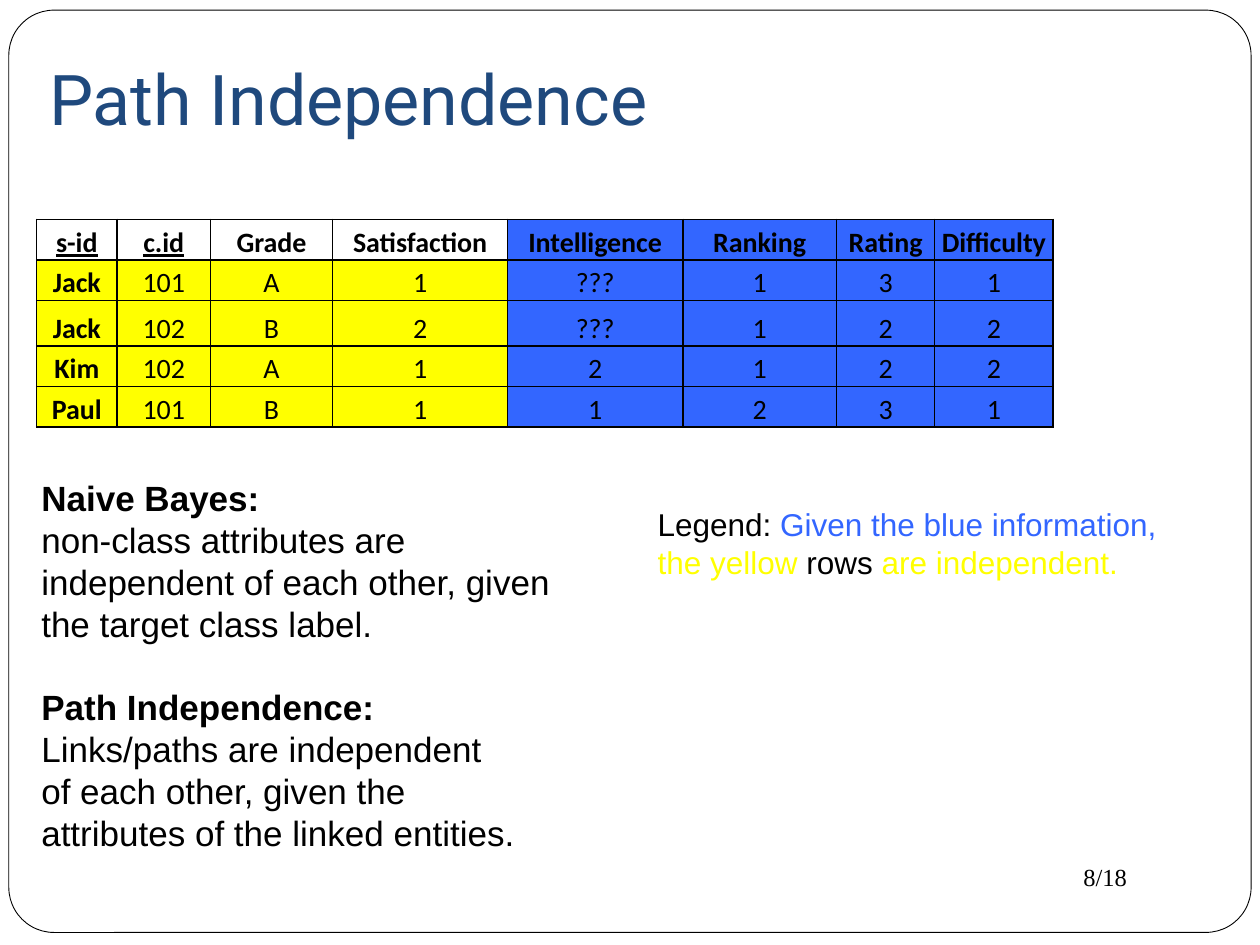
from typing import NamedTuple

from lxml import etree
from pptx import Presentation
from pptx.dml.color import RGBColor
from pptx.enum.shapes import MSO_SHAPE
from pptx.enum.text import MSO_ANCHOR, MSO_AUTO_SIZE, PP_ALIGN
from pptx.oxml.ns import qn
from pptx.util import Emu, Inches, Pt

ROUNDED = MSO_SHAPE.ROUNDED_RECTANGLE
BOTTOM = MSO_ANCHOR.BOTTOM
CENTER, LEFT = PP_ALIGN.CENTER, PP_ALIGN.LEFT
NO_AUTOFIT = MSO_AUTO_SIZE.NONE
GROW = MSO_AUTO_SIZE.SHAPE_TO_FIT_TEXT

SLIDE_WIDTH, SLIDE_HEIGHT = Inches(10), Inches(7.5)
BLACK, WHITE = "000000", "FFFFFF"
BLUE, YELLOW, NAVY = "3366FF", "FFFF00", "1F497D"

COLUMN_WIDTHS = [0.64, 0.74, 0.97, 1.39, 1.39, 1.22, 0.78, 0.94]
ROW_HEIGHTS = [0.32, 0.32, 0.36, 0.32, 0.32]
KEY_COLUMNS = 2
LINK_COLUMNS = 4
RECORDS = [
    ["s-id", "c.id", "Grade", "Satisfaction", "Intelligence", "Ranking", "Rating", "Difficulty"],
    ["Jack", "101", "A", "1", "???", "1", "3", "1"],
    ["Jack", "102", "B", "2", "???", "1", "2", "2"],
    ["Kim", "102", "A", "1", "2", "1", "2", "2"],
    ["Paul", "101", "B", "1", "1", "2", "3", "1"],
]


class Area(NamedTuple):
    """Left, top, width and height as percentages of the slide."""
    left: float
    top: float
    width: float
    height: float

    def lengths(self) -> list[Emu]:
        sides = (SLIDE_WIDTH, SLIDE_HEIGHT) * 2
        return [Emu(round(side * share / 100)) for side, share in zip(sides, self)]


class Phrase(NamedTuple):
    text: str
    color: str = BLACK
    bold: bool = False


class Note(NamedTuple):
    area: Area
    lines: list[list[Phrase]]
    size: int
    font: str = "Arial"
    wrap: bool = True


NOTES = [
    Note(Area(85, 90.53, 10, 4.53), [[Phrase("8/18")]], 14, "Times New Roman"),
    Note(Area(2.3, 71.87, 39.7, 19.33), [
        [Phrase("Path Independence:", bold=True)],
        [Phrase("Links/paths are independent of each other, given the "
                "attributes of the linked entities.")],
    ], 20),
    Note(Area(2.3, 49.73, 46.3, 19.33), [
        [Phrase("Naive Bayes:", bold=True)],
        [Phrase("non-class attributes are independent of each other, given "
                "the target class label.")],
    ], 20),
    Note(Area(51.2, 52.8, 41.9, 9.47), [
        [Phrase("Legend: "), Phrase("Given the blue information,", BLUE)],
        [Phrase("the yellow ", YELLOW), Phrase("rows"), Phrase(" are independent.", YELLOW)],
    ], 18, wrap=False),
]


def rgb(value: str) -> RGBColor:
    return RGBColor.from_string(value)


def style_run(run, font: str, size: int, color: str, bold: bool = False) -> None:
    run.font.name = font
    run.font.size = Pt(size)
    run.font.bold = bold
    run.font.color.rgb = rgb(color)


def add_frame(slide) -> None:
    frame = slide.shapes.add_shape(ROUNDED, *Area(0.7, 1.07, 98.6, 97.6).lengths())
    frame.adjustments[0] = 0.049
    frame.shadow.inherit = False
    frame.fill.solid()
    frame.fill.fore_color.rgb = rgb(WHITE)
    frame.line.color.rgb = rgb(BLACK)
    frame.line.width = Pt(0.5)
    # The title placeholder already exists, so the frame goes behind it.
    slide.shapes.element.insert(2, frame.element)


def format_title(slide) -> None:
    title = slide.shapes.title
    title.left, title.top, title.width, title.height = Area(2.9, 4, 94.7, 12.13).lengths()
    text_frame = title.text_frame
    text_frame.text = "Path Independence"
    text_frame.auto_size = NO_AUTOFIT
    text_frame.vertical_anchor = BOTTOM
    text_frame.margin_bottom = Inches(0.1)
    heading = text_frame.paragraphs[0]
    heading.alignment = LEFT
    style_run(heading.runs[0], "Roboto", 40, NAVY)


def add_note(slide, note: Note) -> None:
    text_frame = slide.shapes.add_textbox(*note.area.lengths()).text_frame
    text_frame.word_wrap = note.wrap
    text_frame.auto_size = GROW
    for index, phrases in enumerate(note.lines):
        paragraph = text_frame.add_paragraph() if index else text_frame.paragraphs[0]
        for phrase in phrases:
            run = paragraph.add_run()
            run.text = phrase.text
            style_run(run, note.font, note.size, phrase.color, phrase.bold)


def add_cell_borders(cell) -> None:
    properties = cell._tc.get_or_add_tcPr()
    for position, side in enumerate(("a:lnL", "a:lnR", "a:lnT", "a:lnB")):
        border = etree.Element(qn(side), w=str(Pt(1)))
        fill = etree.SubElement(border, qn("a:solidFill"))
        etree.SubElement(fill, qn("a:srgbClr"), val=BLACK)
        properties.insert(position, border)


def fill_cell(cell, text: str, row: int, column: int) -> None:
    cell.text = text
    cell.vertical_anchor = BOTTOM
    cell.margin_left = cell.margin_right = cell.margin_top = Inches(0.01)
    cell.margin_bottom = 0
    paragraph = cell.text_frame.paragraphs[0]
    paragraph.alignment = CENTER
    paragraph.line_spacing = 1.15
    paragraph.space_after = Pt(10)
    run = paragraph.runs[0]
    style_run(run, "Calibri", 16, BLACK, bold=row == 0 or column == 0)
    run.font.underline = row == 0 and column < KEY_COLUMNS
    if column >= LINK_COLUMNS:
        color = BLUE
    else:
        color = YELLOW if row else WHITE
    cell.fill.solid()
    cell.fill.fore_color.rgb = rgb(color)
    add_cell_borders(cell)


def add_records(slide) -> None:
    left, top = Area(2.9, 23.2, 0, 0).lengths()[:2]
    table = slide.shapes.add_table(
        len(ROW_HEIGHTS), len(COLUMN_WIDTHS), left, top,
        Inches(sum(COLUMN_WIDTHS)), Inches(sum(ROW_HEIGHTS))).table
    table.first_row = table.horz_banding = False
    for column, width in zip(table.columns, COLUMN_WIDTHS):
        column.width = Inches(width)
    for row, height in zip(table.rows, ROW_HEIGHTS):
        row.height = Inches(height)
    for row, record in enumerate(RECORDS):
        for column, text in enumerate(record):
            fill_cell(table.cell(row, column), text, row, column)


def main() -> None:
    presentation = Presentation()
    presentation.slide_width, presentation.slide_height = SLIDE_WIDTH, SLIDE_HEIGHT
    slide = presentation.slides.add_slide(presentation.slide_layouts[5])
    add_frame(slide)
    format_title(slide)
    add_records(slide)
    for note in NOTES:
        add_note(slide, note)
    presentation.save("out.pptx")


if __name__ == "__main__":
    main()
